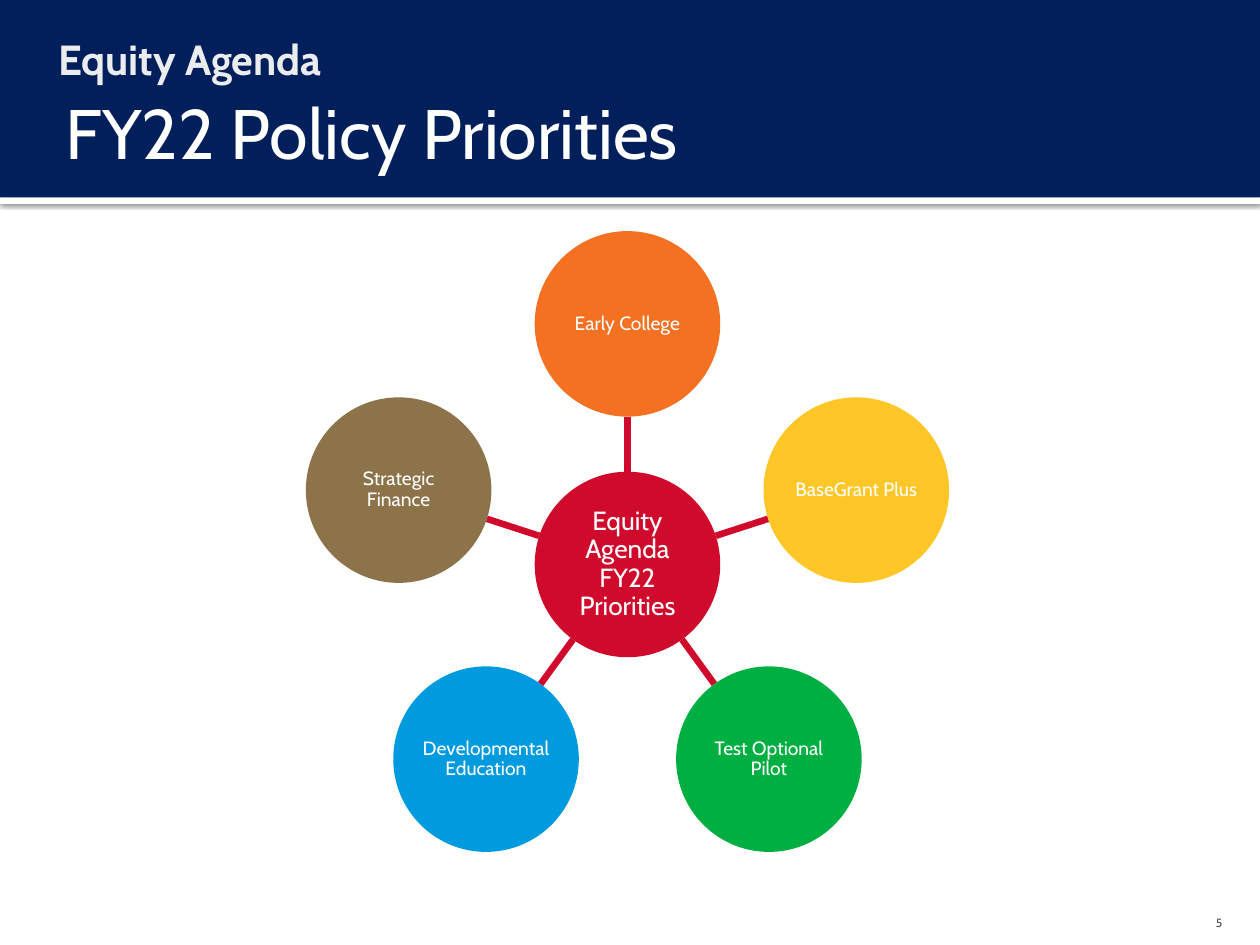
from dataclasses import dataclass
from math import cos, radians, sin

from lxml import etree
from pptx import Presentation
from pptx.dml.color import RGBColor
from pptx.enum import shapes, text
from pptx.oxml import ns, parse_xml
from pptx.util import Cm, Pt


@dataclass(frozen=True)
class Theme:
    """Colours, font and type sizes of the slide."""
    font: str = "Cabin"
    navy: str = "001F5B"
    white: str = "FFFFFF"
    pale: str = "EAECEE"
    grey: str = "454545"
    red: str = "CF0A2C"
    orange: str = "F37121"
    yellow: str = "FFC627"
    green: str = "00AF41"
    blue: str = "009BDE"
    brown: str = "8D734A"
    title: float = 40
    kicker: float = 24
    hub: float = 15
    node: float = 11
    number: float = 6.8
    spoke: float = 3.78


T = Theme()
WIDTH, HEIGHT = 25.4, 19.05
HUB_X, HUB_Y = 12.65, 11.38
RADIUS, ORBIT = 1.87, 4.85
PRIORITIES = [
    ("Early College", T.orange),
    ("BaseGrant Plus", T.yellow),
    ("Test Optional Pilot", T.green),
    ("Developmental Education", T.blue),
    ("Strategic Finance", T.brown),
]


def box(*lengths):
    """Convert centimetre lengths to slide units."""
    return [Cm(v) for v in lengths]


def write(tf, lines, size, color, align, anchor, margins, bold=False):
    """Set one paragraph of lines in a text frame and return it."""
    tf.word_wrap = True
    tf.auto_size = text.MSO_AUTO_SIZE.NONE
    tf.vertical_anchor = anchor
    tf.margin_left, tf.margin_top, tf.margin_right, tf.margin_bottom = box(*margins)
    p = tf.paragraphs[0]
    p.alignment = align
    p.space_before = Pt(0)
    for i, line in enumerate(lines):
        if i:
            p.add_line_break()
        r = p.add_run()
        r.text = line
        r.font.name, r.font.size, r.font.bold = T.font, Pt(size), bold
        r.font.color.rgb = RGBColor.from_string(color)
    return p


def add_filled(s, kind, bounds, color):
    """Add a flat preset shape without an outline."""
    sp = s.shapes.add_shape(kind, *box(*bounds))
    sp.shadow.inherit = False
    sp.fill.solid()
    sp.fill.fore_color.rgb = RGBColor.from_string(color)
    sp.line.fill.background()
    return sp


def add_header(s):
    """Add the navy band and the shadowed white strip under it."""
    rect = shapes.MSO_SHAPE.RECTANGLE
    strip = add_filled(s, rect, (0, 3.98, WIDTH, 0.13), T.white)
    effects = strip._element.spPr.find(ns.qn("a:effectLst"))
    effects.append(parse_xml(
        f'<a:outerShdw {ns.nsdecls("a")} blurRad="{Pt(2.5)}" dist="{Pt(0.8)}" '
        'dir="5400000"><a:srgbClr val="000000">'
        '<a:alpha val="60000"/></a:srgbClr></a:outerShdw>'))
    add_filled(s, rect, (0, 0, WIDTH, 3.98), T.navy)


def fill_placeholder(s, idx, bounds, *args, **kwargs):
    """Place a template placeholder in front and write its text."""
    sp = s.placeholders[idx]
    sp.left, sp.top, sp.width, sp.height = box(*bounds)
    s.shapes._spTree.append(sp._element)
    return write(sp.text_frame, *args, **kwargs)


def add_titles(s):
    """Fill the body placeholder as a kicker, then the title."""
    left = text.PP_ALIGN.LEFT
    p = fill_placeholder(s, 1, (0.84, 0.43, 23.72, 1.27), ["Equity Agenda"],
                         T.kicker, T.pale, left, text.MSO_ANCHOR.TOP,
                         (0.15, 0.25, 0.25, 0.13), bold=True)
    pPr = p._p.get_or_add_pPr()
    pPr.set("marL", str(Cm(0.69)))
    pPr.set("indent", str(Cm(-0.51)))
    etree.SubElement(pPr, ns.qn("a:buNone"))
    fill_placeholder(s, 0, (1.07, 1.48, 23.29, 2.34), ["FY22 Policy Priorities"],
                     T.title, T.white, left, text.MSO_ANCHOR.MIDDLE,
                     (0.25, 0.13, 0.13, 0.13))


def add_circle(s, x, y, lines, size, color):
    """Add a labelled circle centred on a point."""
    bounds = (x - RADIUS, y - RADIUS, 2 * RADIUS, 2 * RADIUS)
    sp = add_filled(s, shapes.MSO_SHAPE.OVAL, bounds, color)
    p = write(sp.text_frame, lines, size, T.white, text.PP_ALIGN.CENTER,
              text.MSO_ANCHOR.MIDDLE, [0.03] * 4)
    p.line_spacing = 0.9


def on_ray(angle, distance):
    """Return the point at a distance from the hub along an angle."""
    return HUB_X + distance * cos(angle), HUB_Y + distance * sin(angle)


def add_spoke(s, angle):
    """Add the line between the hub and an outer circle."""
    ends = on_ray(angle, RADIUS) + on_ray(angle, ORBIT - RADIUS)
    c = s.shapes.add_connector(shapes.MSO_CONNECTOR.STRAIGHT, *box(*ends))
    c.line.width = Pt(T.spoke)
    c.line.color.rgb = RGBColor.from_string(T.red)
    etree.SubElement(c._element.spPr, ns.qn("a:effectLst"))


def add_wheel(s):
    """Add the hub and the priorities spaced evenly around it."""
    add_circle(s, HUB_X, HUB_Y, ["Equity Agenda", "FY22 Priorities"], T.hub, T.red)
    for i, (label, color) in enumerate(PRIORITIES):
        angle = radians(-90 + i * 360 / len(PRIORITIES))
        add_spoke(s, angle)
        add_circle(s, *on_ray(angle, ORBIT), [label], T.node, color)


def add_number(s):
    """Add the page number at the lower right."""
    sp = s.shapes.add_textbox(*box(22.86, 17.98, 2.03, 0.76))
    write(sp.text_frame, ["5"], T.number, T.grey, text.PP_ALIGN.RIGHT,
          text.MSO_ANCHOR.BOTTOM, (0.25, 0.13, 0.25, 0))


def main():
    """Build and save the slide."""
    prs = Presentation()
    prs.slide_width, prs.slide_height = box(WIDTH, HEIGHT)
    s = prs.slides.add_slide(prs.slide_layouts[1])
    add_header(s)
    add_number(s)
    add_titles(s)
    add_wheel(s)
    prs.save("out.pptx")


if __name__ == "__main__":
    main()
